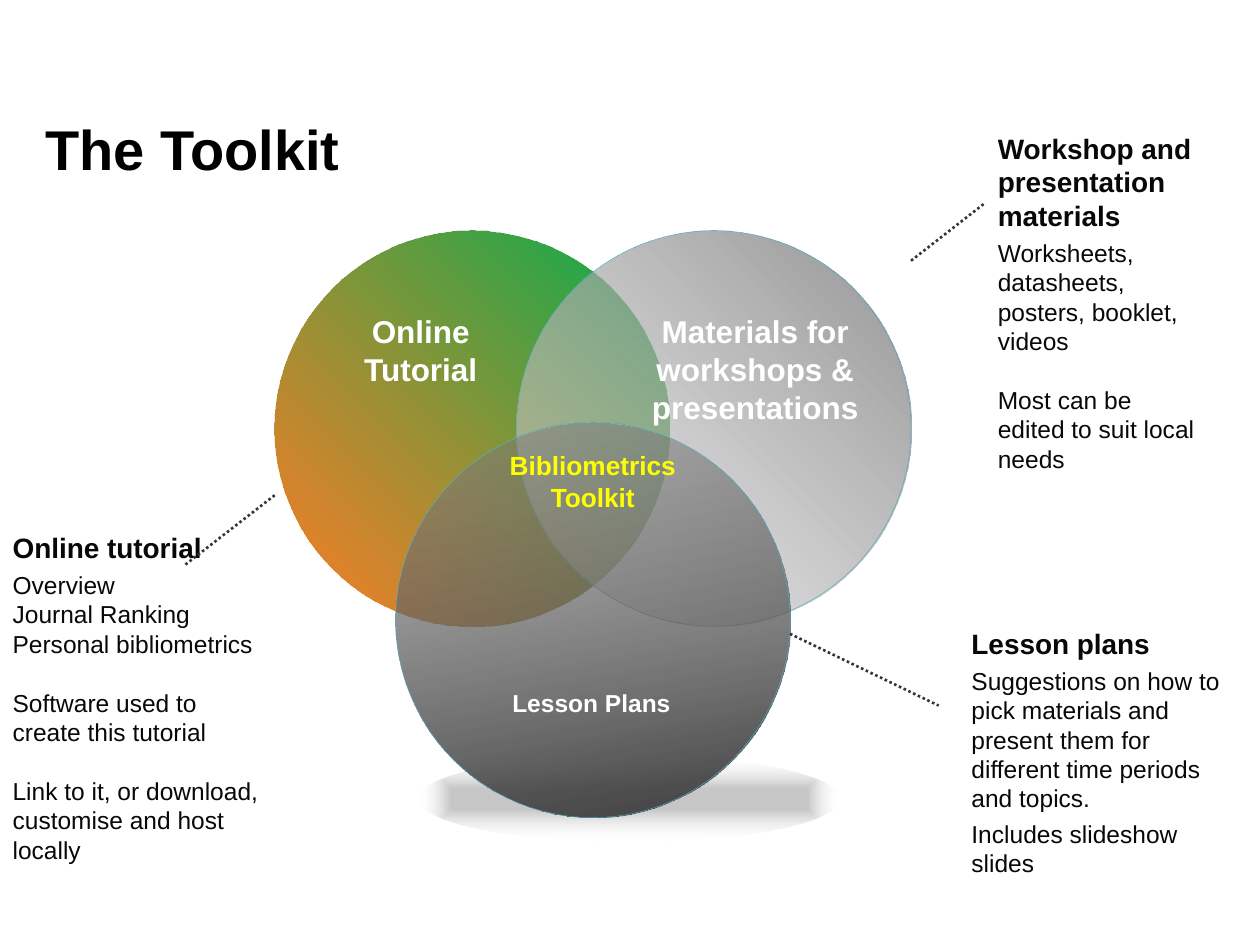
import pptx
import pptx.dml.color
import pptx.enum.dml
import pptx.enum.shapes
import pptx.enum.text
import pptx.oxml
import pptx.oxml.ns
import pptx.util

Pt = pptx.util.Pt
RGB = pptx.dml.color.RGBColor
PP_ALIGN = pptx.enum.text.PP_ALIGN
OVAL = pptx.enum.shapes.MSO_SHAPE.OVAL

BLACK = RGB(0x00, 0x00, 0x00)
WHITE = RGB(0xFF, 0xFF, 0xFF)
YELLOW = RGB(0xFF, 0xFF, 0x00)
GREEN = RGB(0x00, 0xB0, 0x50)
ORANGE = RGB(0xFF, 0x66, 0x00)
LIGHT = RGB(0xD9, 0xD9, 0xD9)
GREY = RGB(0x80, 0x80, 0x80)
DARK = RGB(0x40, 0x40, 0x40)
TEAL = RGB(0x4B, 0xAC, 0xC6)
INK = RGB(0x08, 0x08, 0x08)
LINE = RGB(0x35, 0x36, 0x37)

CIRCLE_W, CIRCLE_H = 225.4, 226
LINEAR = '<a:lin ang="{}" scaled="0"/>'
CENTRED = ('<a:path path="shape"><a:fillToRect l="50000" t="50000" '
           'r="50000" b="50000"/></a:path>')

CIRCLES = [
    (157, 131.8, [(0, GREEN, 100), (100, ORANGE, 85)], 135, None),
    (295.2, 131.8, [(0, LIGHT, 50), (100, GREY, 85)], 315, TEAL),
    (226.1, 241.2, [(0, GREY, 49), (100, DARK, 100)], 80, TEAL),
]
LABELS = [
    ((281.5, 253.4, 114.5, 44), "Bibliometrics\vToolkit", 15, YELLOW),
    ((364.3, 175, 134.6, 72.7), "Materials for\vworkshops &\vpresentations", 18, WHITE),
    ((281.5, 389.5, 113, 24.5), "Lesson Plans", 14, WHITE),
    ((184.3, 175, 112.3, 51), "Online Tutorial", 18, WHITE),
]
LEADERS = [
    (451.4, 362.2, 536.4, 403.2),
    (520.6, 149, 563, 115.9),
    (157, 283, 105.1, 323.3),
]
NOTES = [
    ((547.9, 354.2, 164.2, 152), "Lesson plans", [
        (3.4, "Suggestions on how to pick materials and present them for "
              "different time periods and topics."),
        (3.4, "Includes slideshow slides")]),
    ((563, 71.3, 129.6, 238.3), "Workshop and presentation materials", [
        (3.4, "Worksheets, datasheets, posters, booklet, videos"),
        (16.8, "Most can be edited to suit local needs")]),
    ((0, 299.5, 158.4, 199.4), "Online tutorial", [
        (3.4, "Overview\vJournal Ranking\vPersonal bibliometrics"),
        (16.8, "Software used to create this tutorial"),
        (16.8, "Link to it, or download, customise and host locally")]),
]


def set_attrs(obj, **values):
    for name, value in values.items():
        setattr(obj, name, value)


def place(sp, box):
    left, top, width, height = map(Pt, box)
    set_attrs(sp, left=left, top=top, width=width, height=height)


def format_frame(tf):
    set_attrs(tf, word_wrap=True,
              auto_size=pptx.enum.text.MSO_AUTO_SIZE.NONE,
              vertical_anchor=pptx.enum.text.MSO_ANCHOR.TOP)


def write(p, text, size, color, bold, align=PP_ALIGN.LEFT, before=0):
    p.text = text
    set_attrs(p, alignment=align, space_before=Pt(before))
    for r in p.runs:
        set_attrs(r.font, name="Arial", size=Pt(size), bold=bold)
        r.font.color.rgb = color


def remove_bullet(p):
    pPr = p._p.get_or_add_pPr()
    pPr.set("marL", "0")
    pPr.set("indent", "0")
    pPr.append(pptx.oxml.parse_xml(
        f'<a:buNone {pptx.oxml.ns.nsdecls("a")}/>'))


def add_oval(shapes, box, stops, direction, outline=None):
    sp = shapes.add_shape(OVAL, *map(Pt, box))
    stop_xml = "".join(
        f'<a:gs pos="{pos * 1000}"><a:srgbClr val="{color}">'
        f'<a:alpha val="{alpha * 1000}"/></a:srgbClr></a:gs>'
        for pos, color, alpha in stops)
    sp._element.spPr.insert(2, pptx.oxml.parse_xml(
        f'<a:gradFill {pptx.oxml.ns.nsdecls("a")} rotWithShape="1">'
        f'<a:gsLst>{stop_xml}</a:gsLst>{direction}</a:gradFill>'))
    if outline is None:
        sp.line.fill.background()
    else:
        sp.line.color.rgb = outline
        sp.line.width = Pt(0.25)
    sp.shadow.inherit = False


def add_label(s, box, text, size, color):
    tf = s.shapes.add_textbox(*map(Pt, box)).text_frame
    format_frame(tf)
    write(tf.paragraphs[0], text, size, color, True, PP_ALIGN.CENTER)


def add_leader(s, points):
    line = s.shapes.add_connector(
        pptx.enum.shapes.MSO_CONNECTOR.STRAIGHT, *map(Pt, points))
    line.line.color.rgb = LINE
    set_attrs(line.line, width=Pt(1.5),
              dash_style=pptx.enum.dml.MSO_LINE.ROUND_DOT)
    line._element.spPr.append(pptx.oxml.parse_xml(
        f'<a:effectLst {pptx.oxml.ns.nsdecls("a")}/>'))


def fill_note(sp, box, heading, items):
    place(sp, box)
    tf = sp.text_frame
    format_frame(tf)
    p = tf.paragraphs[0]
    remove_bullet(p)
    write(p, heading, 16, INK, True)
    for before, text in items:
        p = tf.add_paragraph()
        remove_bullet(p)
        write(p, text, 14, INK, False, before=before)


def fill_title(sp):
    place(sp, (18.7, 61.9, 544.3, 59.8))
    format_frame(sp.text_frame)
    write(sp.text_frame.paragraphs[0], "The Toolkit", 32, BLACK, True)


def main():
    prs = pptx.Presentation()
    set_attrs(prs, slide_width=Pt(720), slide_height=Pt(540))
    s = prs.slides.add_slide(prs.slide_layouts.get_by_name("Comparison"))
    title, *bodies = list(s.placeholders)
    fill_title(title)
    for sp, note in zip(bodies, NOTES):
        fill_note(sp, *note)
    for sp in bodies[len(NOTES):]:
        sp._element.getparent().remove(sp._element)
    add_oval(s.shapes, (239, 432, 240.5, 49),
             [(24, BLACK, 22), (100, WHITE, 0)], CENTRED)
    venn = s.shapes.add_group_shape()
    for left, top, stops, angle, outline in CIRCLES:
        add_oval(venn.shapes, (left, top, CIRCLE_W, CIRCLE_H), stops,
                 LINEAR.format(angle * 60000), outline)
    for label in LABELS:
        add_label(s, *label)
    for points in LEADERS:
        add_leader(s, points)
    prs.save("out.pptx")


if __name__ == "__main__":
    main()
